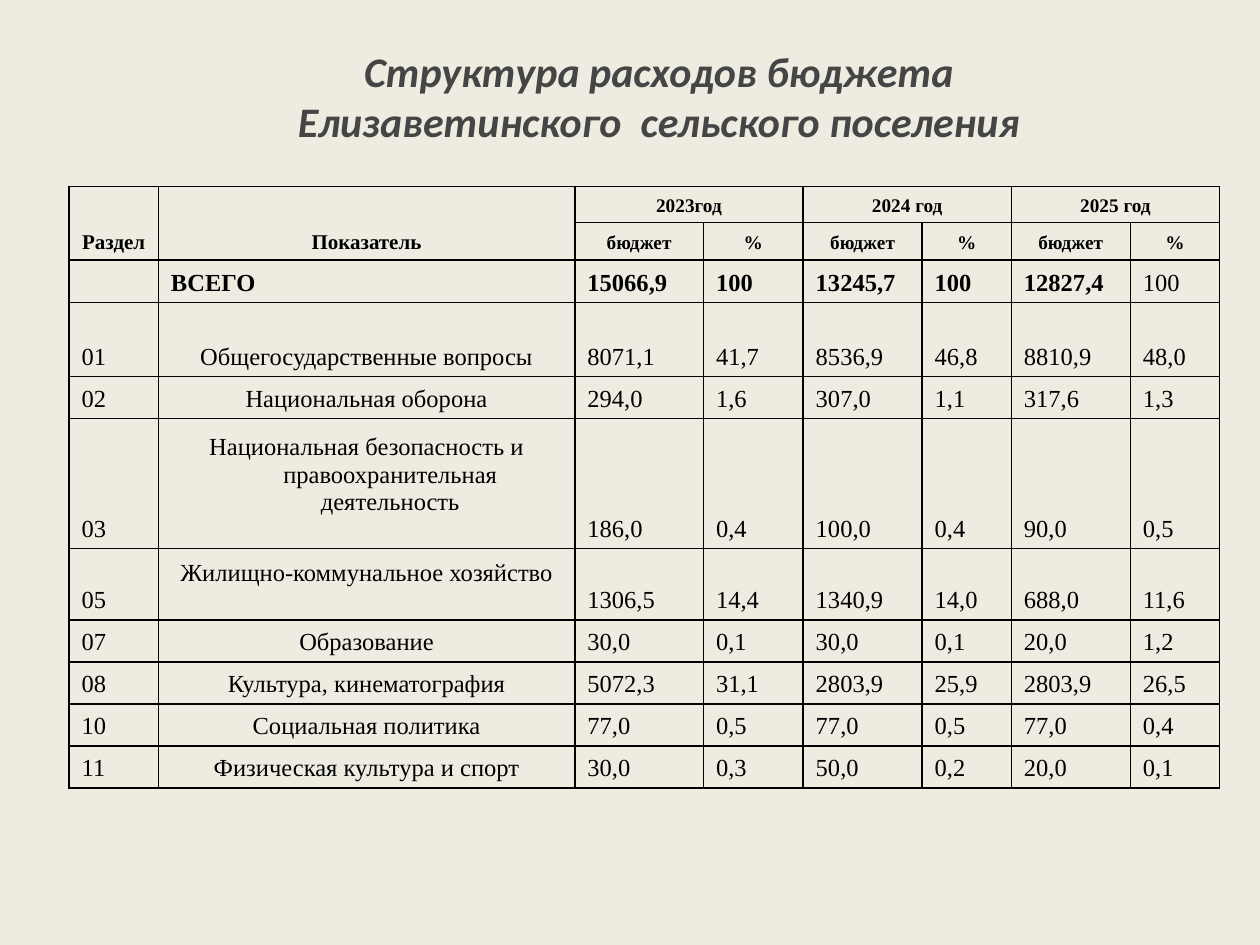
from lxml import etree
from pptx import Presentation
from pptx.dml.color import RGBColor
from pptx.enum import text as t
from pptx.oxml.ns import qn
from pptx.util import Pt

HUES = {"back": "EEECE1", "title": "454545", "ink": "000000"}
COLS = [51, 238, 73.5, 57, 68, 51, 68, 51]
ROWS = [20.5, 21.5, 24, 42.3, 24, 74.3, 40.8, 24, 24, 24, 24]
LIFT = {5: 19, 6: 19}
DATA = [
    ["Раздел", "Показатель", "2023год", "", "2024 год", "", "2025 год", ""],
    ["", ""] + ["бюджет", "%"] * 3,
    ["", "ВСЕГО", "15066,9", "100", "13245,7", "100", "12827,4", "100"],
    ["01", "Общегосударственные вопросы", "8071,1", "41,7", "8536,9", "46,8", "8810,9", "48,0"],
    ["02", "Национальная оборона", "294,0", "1,6", "307,0", "1,1", "317,6", "1,3"],
    ["03", "Национальная безопасность и правоохранительная деятельность",
     "186,0", "0,4", "100,0", "0,4", "90,0", "0,5"],
    ["05", "Жилищно-коммунальное хозяйство", "1306,5", "14,4", "1340,9", "14,0", "688,0", "11,6"],
    ["07", "Образование", "30,0", "0,1", "30,0", "0,1", "20,0", "1,2"],
    ["08", "Культура, кинематография", "5072,3", "31,1", "2803,9", "25,9", "2803,9", "26,5"],
    ["10", "Социальная политика", "77,0", "0,5", "77,0", "0,5", "77,0", "0,4"],
    ["11", "Физическая культура и спорт", "30,0", "0,3", "50,0", "0,2", "20,0", "0,1"],
]


def style(run, face, size, hue, bold, slant=False):
    """Format one run of text."""
    font = run.font
    font.name, font.size, font.bold, font.italic = face, Pt(size), bold, slant
    font.color.rgb = RGBColor.from_string(HUES[hue])


def edge(cell):
    """Draw a thin line on all four sides of a cell."""
    props = cell._tc.get_or_add_tcPr()
    for spot, side in enumerate(("lnL", "lnR", "lnT", "lnB")):
        line = etree.Element(qn("a:" + side), w=str(Pt(1)))
        fill = etree.SubElement(line, qn("a:solidFill"))
        etree.SubElement(fill, qn("a:srgbClr"), val=HUES["ink"])
        props.insert(spot, line)


def write(cell, words, row, col):
    """Fill and format one cell of the budget table."""
    head = row < 2
    size = (12 if col < 2 else 11) if head else 14
    cell.fill.background()
    edge(cell)
    cell.vertical_anchor = t.MSO_ANCHOR.BOTTOM
    cell.margin_left = cell.margin_right = Pt(7.2)
    cell.margin_top = Pt(3.6)
    cell.margin_bottom = Pt(LIFT.get(row, 3.6) if col == 1 else 3.6)
    para = cell.text_frame.paragraphs[0]
    para.text = words
    mid = head or (col == 1 and row > 2)
    para.alignment = t.PP_ALIGN.CENTER if mid else t.PP_ALIGN.LEFT
    props = para._p.get_or_add_pPr()
    props.set("marL", str(Pt(27)))
    props.set("indent", str(Pt(-27)))
    for run in para.runs:
        style(run, "Times New Roman", size, "ink", head or (row == 2 and col < 7))
    if not words:
        etree.SubElement(para._p, qn("a:endParaRPr"), sz=str(size * 100))


def budget(slide, left, top):
    """Place the budget table with its corner at left and top."""
    frame = slide.shapes.add_table(len(ROWS), len(COLS), Pt(left), Pt(top),
                                   Pt(sum(COLS)), Pt(sum(ROWS)))
    table = frame.table
    table.first_row = table.horz_banding = False
    for col, width in zip(table.columns, COLS):
        col.width = Pt(width)
    for row, height in zip(table.rows, ROWS):
        row.height = Pt(height)
    for r, line in enumerate(DATA):
        for c, words in enumerate(line):
            write(table.cell(r, c), words, r, c)
    for c in (0, 1):
        table.cell(0, c).merge(table.cell(1, c))
    for c in (2, 4, 6):
        table.cell(0, c).merge(table.cell(0, c + 1))


def heading(slide, left, top, width, height):
    """Place the slide title in the given box."""
    title = slide.shapes.title
    title.left, title.top = Pt(left), Pt(top)
    title.width, title.height = Pt(width), Pt(height)
    frame = title.text_frame
    frame.text = "Структура расходов бюджета\vЕлизаветинского  сельского поселения"
    frame.word_wrap = True
    frame.auto_size = t.MSO_AUTO_SIZE.NONE
    frame.vertical_anchor = t.MSO_ANCHOR.TOP
    frame.margin_top = Pt(6)
    para = frame.paragraphs[0]
    para.alignment = t.PP_ALIGN.CENTER
    for run in para.runs:
        style(run, "Calibri", 24, "title", True, True)


def main():
    """Build and save the deck."""
    deck = Presentation()
    deck.slide_width, deck.slide_height = Pt(720), Pt(540)
    slide = deck.slides.add_slide(deck.slide_layouts[5])
    fill = slide.background.fill
    fill.solid()
    fill.fore_color.rgb = RGBColor.from_string(HUES["back"])
    heading(slide, 70.5, 20, 612, 90)
    budget(slide, 39.5, 106.7)
    deck.save("out.pptx")


if __name__ == "__main__":
    main()
